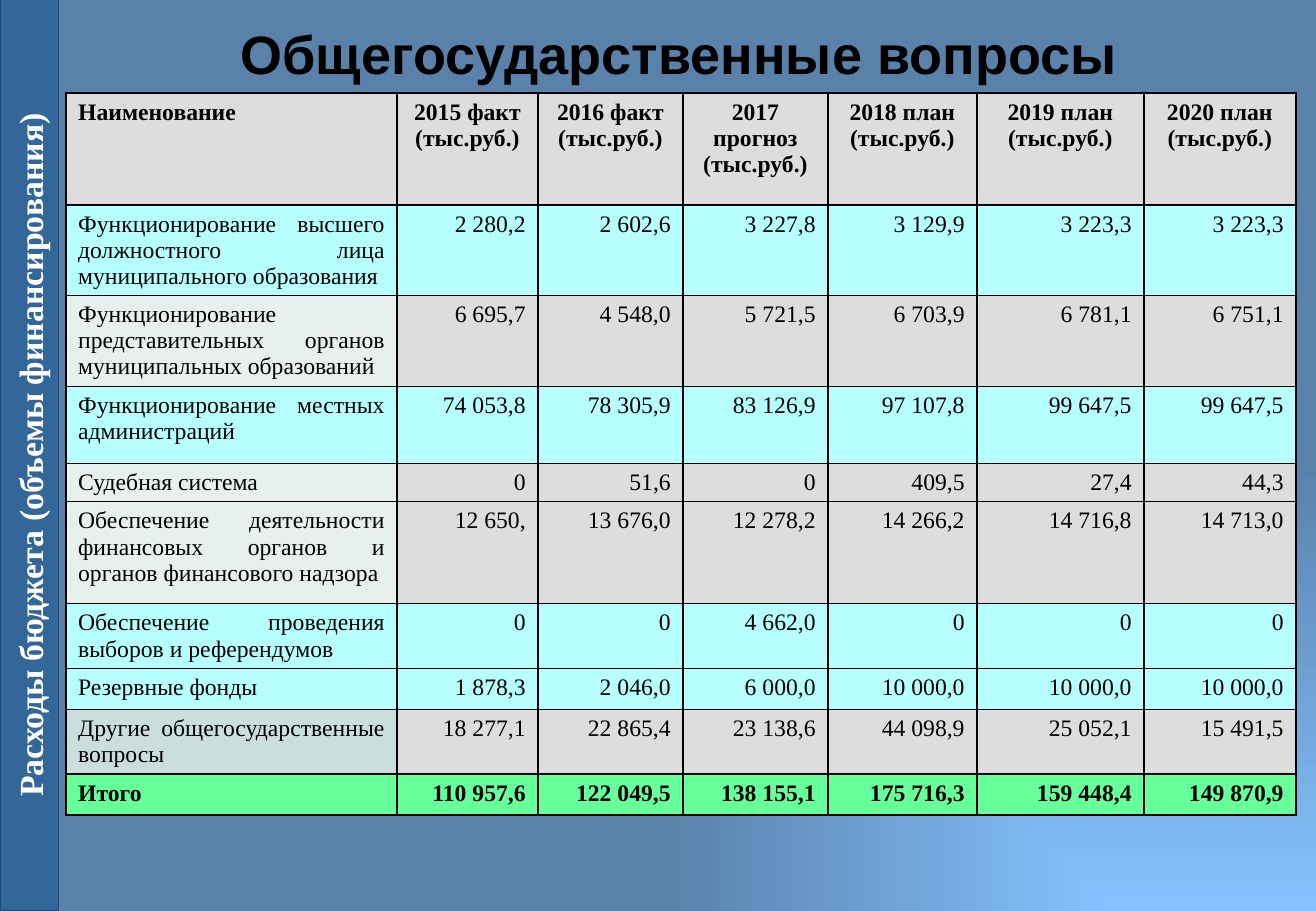
from lxml.etree import SubElement
from pptx import Presentation
from pptx.dml.color import RGBColor
from pptx.enum.shapes import MSO_SHAPE
from pptx.enum.text import MSO_ANCHOR, PP_ALIGN
from pptx.oxml.ns import qn
from pptx.util import Emu, Pt

EMU_PER_PX = 7526
SLIDE_WIDTH, SLIDE_HEIGHT = 1316, 911
SIDEBAR_WIDTH = 58
COLUMN_WIDTHS = [331, 141, 145, 145, 149, 167, 152]
ROW_HEIGHTS = [112, 90, 91, 77, 38, 102, 65, 41, 63, 41]
GREY, CYAN, PALE, SAGE, GREEN = "DDDDDD", "B7FFFF", "E7EFEF", "CBDEDE", "66FF99"
PERIODS = ["2015 факт", "2016 факт", "2017 прогноз", "2018 план", "2019 план", "2020 план"]
EXPENSES = [
    (CYAN, CYAN, "Функционирование высшего должностного лица муниципального образования",
     ["2 280,2", "2 602,6", "3 227,8", "3 129,9", "3 223,3", "3 223,3"]),
    (PALE, GREY, "Функционирование представительных органов муниципальных образований",
     ["6 695,7", "4 548,0", "5 721,5", "6 703,9", "6 781,1", "6 751,1"]),
    (CYAN, CYAN, "Функционирование местных администраций",
     ["74 053,8", "78 305,9", "83 126,9", "97 107,8", "99 647,5", "99 647,5"]),
    (PALE, GREY, "Судебная система",
     ["0", "51,6", "0", "409,5", "27,4", "44,3"]),
    (PALE, GREY, "Обеспечение деятельности финансовых органов и органов финансового надзора",
     ["12 650,", "13 676,0", "12 278,2", "14 266,2", "14 716,8", "14 713,0"]),
    (CYAN, CYAN, "Обеспечение проведения выборов и референдумов",
     ["0", "0", "4 662,0", "0", "0", "0"]),
    (CYAN, CYAN, "Резервные фонды",
     ["1 878,3", "2 046,0", "6 000,0", "10 000,0", "10 000,0", "10 000,0"]),
    (SAGE, GREY, "Другие общегосударственные вопросы",
     ["18 277,1", "22 865,4", "23 138,6", "44 098,9", "25 052,1", "15 491,5"]),
    (GREEN, GREEN, "Итого",
     ["110 957,6", "122 049,5", "138 155,1", "175 716,3", "159 448,4", "149 870,9"]),
]


def px(length):
    return Emu(length * EMU_PER_PX)


def color(hex_string):
    return RGBColor.from_string(hex_string)


def format_font(font, name, size, hex_string, bold):
    font.name = name
    font.size = Pt(size)
    font.color.rgb = color(hex_string)
    font.bold = bold


def set_background(slide):
    fill = slide.background.fill
    fill.gradient()
    for stop, hex_string in zip(fill.gradient_stops, ("85C2FF", "5981AA")):
        stop.color.rgb = color(hex_string)
    gradient = slide.element.find(".//" + qn("a:gradFill"))
    gradient.remove(gradient.find(qn("a:lin")))
    gradient_path = SubElement(gradient, qn("a:path"), path="rect")
    SubElement(gradient_path, qn("a:fillToRect"), l="100000", t="100000", r="0", b="0")


def fill_title(title):
    title.left, title.top, title.width, title.height = px(61), px(0), px(1255), px(95)
    frame = title.text_frame
    frame.vertical_anchor = MSO_ANCHOR.MIDDLE
    paragraph = frame.paragraphs[0]
    paragraph.alignment = PP_ALIGN.CENTER
    for text, size in (("Общегосударственные вопросы", 32), (" ", 40)):
        run = paragraph.add_run()
        run.text = text
        format_font(run.font, "Arial", size, "000000", True)


def add_sidebar(slide, text):
    offset = (SLIDE_HEIGHT - SIDEBAR_WIDTH) // 2
    shape = slide.shapes.add_shape(
        MSO_SHAPE.RECTANGLE, px(-offset), px(offset), px(SLIDE_HEIGHT), px(SIDEBAR_WIDTH))
    shape.rotation = 270
    shape.shadow.inherit = False
    shape.fill.solid()
    shape.fill.fore_color.rgb = color("336699")
    shape.line.color.rgb = color("23496F")
    shape.line.width = Pt(1)
    shape.text_frame.vertical_anchor = MSO_ANCHOR.MIDDLE
    paragraph = shape.text_frame.paragraphs[0]
    paragraph.text = text
    paragraph.alignment = PP_ALIGN.CENTER
    format_font(paragraph.font, "Times New Roman", 20, "FFFFFF", True)


def add_borders(cell):
    properties = cell._tc.get_or_add_tcPr()
    for position, side in enumerate(("a:lnL", "a:lnR", "a:lnT", "a:lnB")):
        line = properties.makeelement(qn(side), {"w": str(Pt(1))})
        properties.insert(position, line)
        solid = SubElement(line, qn("a:solidFill"))
        SubElement(solid, qn("a:srgbClr"), val="000000")


def fill_cell(cell, text, fill, alignment, bold):
    cell.fill.solid()
    cell.fill.fore_color.rgb = color(fill)
    add_borders(cell)
    paragraph = cell.text_frame.paragraphs[0]
    paragraph.text = text
    paragraph.alignment = alignment
    format_font(paragraph.font, "Times New Roman", 14, "000000", bold)


def fill_row(cells, texts, fills, alignments, bold):
    for index, (cell, text) in enumerate(zip(cells, texts)):
        kind = min(index, 1)
        fill_cell(cell, text, fills[kind], alignments[kind], bold)


def add_expense_table(slide):
    table = slide.shapes.add_table(
        len(ROW_HEIGHTS), len(COLUMN_WIDTHS), px(66), px(93),
        px(sum(COLUMN_WIDTHS)), px(sum(ROW_HEIGHTS))).table
    for column, width in zip(table.columns, COLUMN_WIDTHS):
        column.width = px(width)
    for row, height in zip(table.rows, ROW_HEIGHTS):
        row.height = px(height)
    header, *body = table.rows
    headings = ["Наименование"] + [f"{period} (тыс.руб.)" for period in PERIODS]
    fill_row(header.cells, headings, (GREY, GREY), (PP_ALIGN.LEFT, PP_ALIGN.CENTER), True)
    for row, (label_fill, value_fill, label, values) in zip(body, EXPENSES):
        fill_row(row.cells, [label] + values, (label_fill, value_fill),
                 (PP_ALIGN.JUSTIFY, PP_ALIGN.RIGHT), label == "Итого")


def main():
    presentation = Presentation()
    presentation.slide_width = px(SLIDE_WIDTH)
    presentation.slide_height = px(SLIDE_HEIGHT)
    slide = presentation.slides.add_slide(presentation.slide_layouts[5])
    set_background(slide)
    fill_title(slide.shapes.title)
    add_sidebar(slide, "Расходы бюджета (объемы финансирования)")
    add_expense_table(slide)
    presentation.save("out.pptx")


if __name__ == "__main__":
    main()
